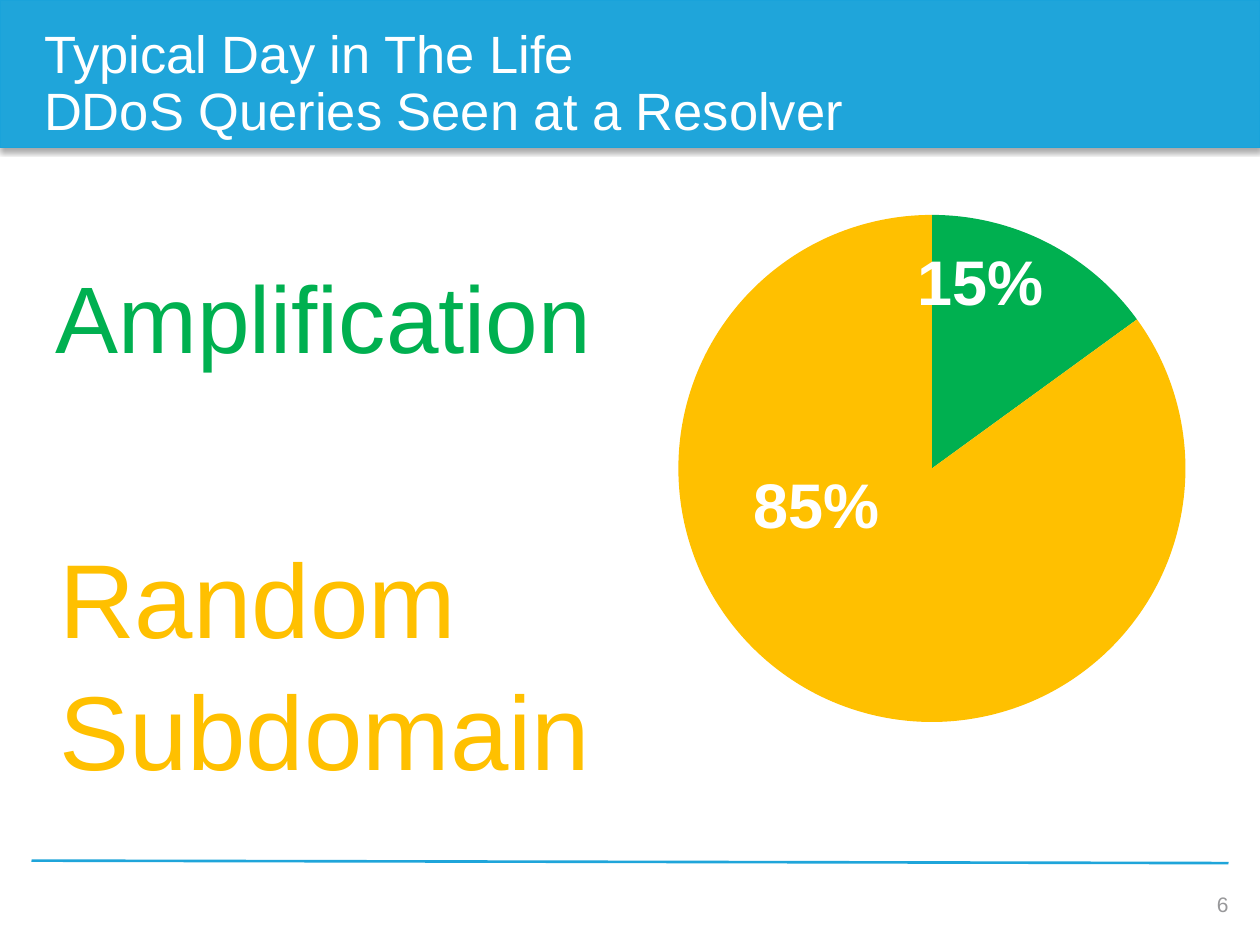
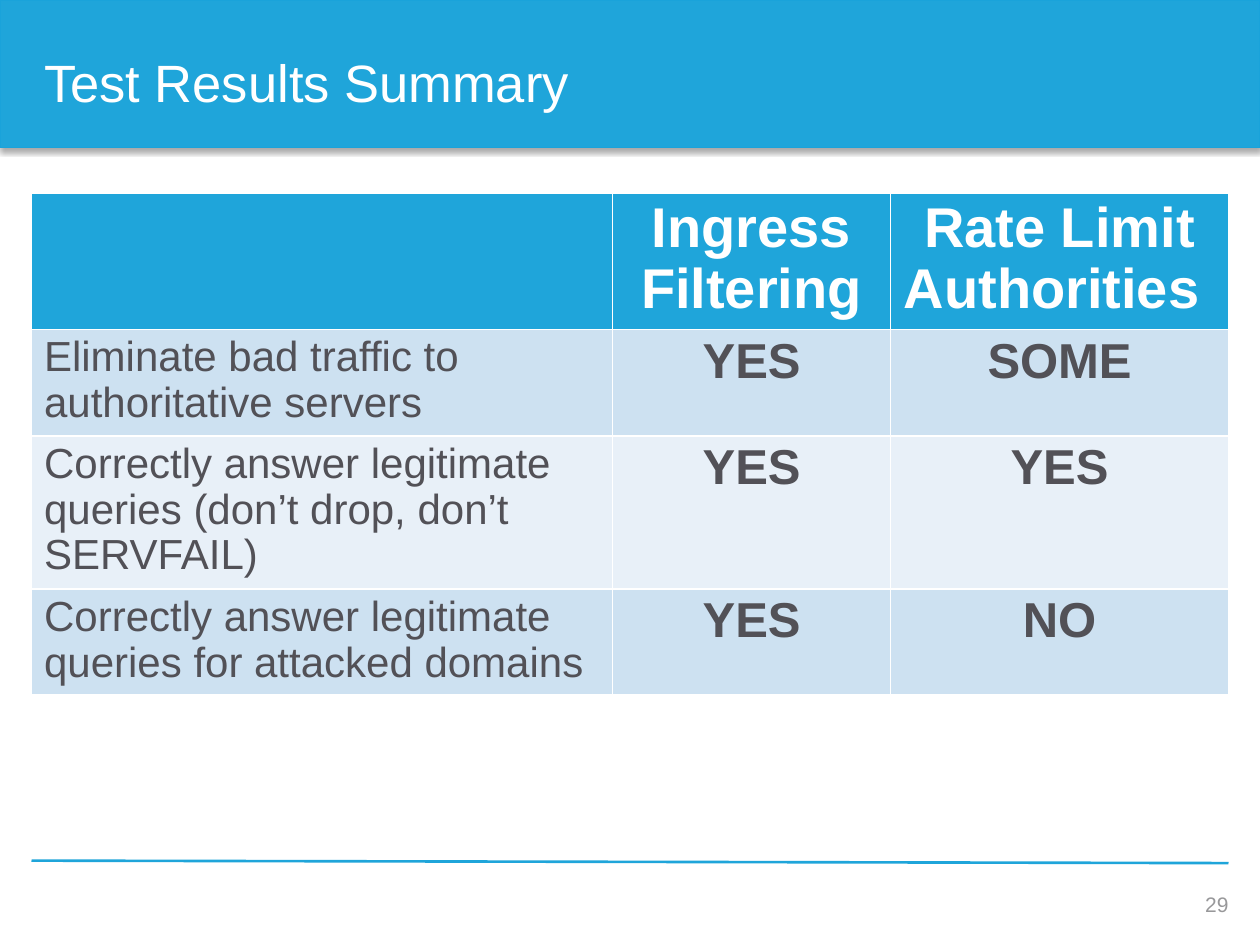
from lxml import etree
from pptx import Presentation
from pptx.chart.data import CategoryChartData
from pptx.dml.color import RGBColor
from pptx.enum import chart as charts, shapes, text
from pptx.oxml import parse_xml
from pptx.oxml.ns import nsdecls, qn
from pptx.util import Pt

FONT = "Arial"
COLORS = {
    "blue": "1FA5DA", "band_edge": "1AA3DA", "white": "FFFFFF",
    "body": "525157", "number": "98989A", "green": "00B050",
    "amber": "FFC000", "row_dark": "CDE1F1", "row_light": "E8F0F8",
}
LEFT, RIGHT = 18, 702
BAND_SHADOW = (
    f'<a:effectLst {nsdecls("a")}><a:outerShdw blurRad="40000" dist="23000" '
    'dir="5400000" rotWithShape="0"><a:srgbClr val="000000">'
    '<a:alpha val="35000"/></a:srgbClr></a:outerShdw></a:effectLst>'
)


def color(name):
    return RGBColor.from_string(COLORS[name])


def points(*lengths):
    return [Pt(length) for length in lengths]


def style_font(font, size, name, bold=False):
    font.name = FONT
    font.size = Pt(size)
    font.bold = bold
    font.color.rgb = color(name)


def style_text(frame, size, name, bold=False, align=text.PP_ALIGN.LEFT, spacing=1.0):
    for para in frame.paragraphs:
        para.alignment = align
        para.line_spacing = spacing
        for span in para.runs:
            style_font(span.font, size, name, bold)


def set_margins(frame, left=0, top=0, right=0, bottom=0):
    frame.margin_left, frame.margin_top, frame.margin_right, frame.margin_bottom = points(
        left, top, right, bottom)


# Shared slide frame: band, footer rule, number, title
def add_band(page):
    band = page.shapes.add_shape(shapes.MSO_SHAPE.RECTANGLE, *points(0, 0, 720, 84.24))
    band.fill.solid()
    band.fill.fore_color.rgb = color("blue")
    band.line.color.rgb = color("band_edge")
    band.line.width = Pt(0.75)
    band.element.spPr.append(parse_xml(BAND_SHADOW))


def add_footer(page, number):
    rule = page.shapes.add_connector(
        shapes.MSO_CONNECTOR.STRAIGHT, *points(LEFT, 491.8, RIGHT, 493.2))
    rule.line.color.rgb = color("blue")
    rule.line.width = Pt(1.5)
    etree.SubElement(rule.element.spPr, qn("a:effectLst"))

    box = page.shapes.add_textbox(*points(534.2, 493.2, 167.8, 28.8))
    frame = box.text_frame
    frame.word_wrap = True
    frame.vertical_anchor = text.MSO_ANCHOR.MIDDLE
    set_margins(frame, top=18)
    frame.text = str(number)
    style_text(frame, 12, "number", align=text.PP_ALIGN.RIGHT)


def set_title(page, title):
    box = page.shapes.title
    box.left, box.top, box.width, box.height = points(LEFT, 18.7, 684.7, 59.8)
    frame = box.text_frame
    frame.text = title
    frame.auto_size = text.MSO_AUTO_SIZE.NONE
    frame.vertical_anchor = text.MSO_ANCHOR.MIDDLE
    style_text(frame, 30, "white", spacing=0.9)
    page.shapes.element.append(box.element)  # in front of the band


def add_page(deck, title, number):
    page = deck.slides.add_slide(deck.slide_layouts[5])
    add_band(page)
    add_footer(page, number)
    set_title(page, title)
    return page


# Content elements
def add_attack_name(page, name, place, size, color_name):
    box = page.shapes.add_textbox(*points(*place))
    frame = box.text_frame
    frame.word_wrap = False
    set_margins(frame)
    frame.text = name
    frame.auto_size = text.MSO_AUTO_SIZE.SHAPE_TO_FIT_TEXT
    style_text(frame, size, color_name, spacing=1.05)


def manual_layout(**values):
    fields = "".join(f'<c:{key} val="{value}"/>' for key, value in values.items())
    return parse_xml(f'<c:layout {nsdecls("c")}><c:manualLayout>{fields}'
                     '</c:manualLayout></c:layout>')


def shift_label(series, index, x, y):
    label = series.points[index].data_label
    style_font(label.font, 36, "white", True)
    label.position = charts.XL_LABEL_POSITION.INSIDE_END
    node = series.data_labels._element.find(qn("c:dLbl"))
    node.find(qn("c:showVal")).set("val", "0")
    node.find(qn("c:showPercent")).set("val", "1")
    old_layout = node.find(qn("c:layout"))
    if old_layout is not None:
        node.remove(old_layout)
    number_format = parse_xml(
        f'<c:numFmt {nsdecls("c")} formatCode="0%" sourceLinked="0"/>')
    node.find(qn("c:idx")).addnext(number_format)
    number_format.addprevious(manual_layout(x=x, y=y))


def add_share_pie(page, place, shares):
    data = CategoryChartData()
    data.categories = [str(index + 1) for index in range(len(shares))]
    data.add_series("Series 1", [value for value, _ in shares])
    chart = page.shapes.add_chart(charts.XL_CHART_TYPE.PIE, *points(*place), data).chart
    chart.has_legend = False
    chart.has_title = False
    style_font(chart.font, 10, "body")

    plot = chart.plots[0]
    plot.vary_by_categories = True
    series = plot.series[0]
    for index, (_, name) in enumerate(shares):
        fill = series.points[index].format.fill
        fill.solid()
        fill.fore_color.rgb = color(name)

    labels = series.data_labels
    labels.show_value = False
    labels.show_percentage = True
    labels.number_format = "0%"
    labels.number_format_is_linked = False
    labels.position = charts.XL_LABEL_POSITION.INSIDE_END
    style_font(labels.font, 36, "white", True)
    shift_label(series, 1, -0.09, -0.24)

    area = chart._chartSpace.chart.plotArea
    for old_layout in area.findall(qn("c:layout")):
        area.remove(old_layout)
    area.insert(0, manual_layout(layoutTarget="inner", xMode="edge", yMode="edge",
                                 x=0.2, y=0.03, w=0.68, h=0.84))


def add_results_table(page, rows, widths, heights):
    table = page.shapes.add_table(
        len(rows), len(widths), *points(LEFT, 110.2, sum(widths), sum(heights))).table
    for column, width in zip(table.columns, widths):
        column.width = Pt(width)
    for row_index, (row, height) in enumerate(zip(rows, heights)):
        table.rows[row_index].height = Pt(height)
        for column_index, content in enumerate(row):
            cell = table.cell(row_index, column_index)
            cell.text = content
            cell.fill.solid()
            if row_index == 0:
                fill, size, name = "blue", 32, "white"
            else:
                fill = "row_dark" if row_index % 2 else "row_light"
                size, name = (28 if column_index else 24), "body"
            cell.fill.fore_color.rgb = color(fill)
            align = text.PP_ALIGN.CENTER if column_index else text.PP_ALIGN.LEFT
            style_text(cell.text_frame, size, name, column_index > 0, align, 0.97)


def main():
    deck = Presentation()
    deck.slide_width, deck.slide_height = points(720, 540)

    # Share of attack queries
    page = add_page(deck, "Typical Day in The Life\vDDoS Queries Seen at a Resolver", 6)
    add_share_pie(page, (302.4, 111.6, 426.2, 347), [(15, "green"), (85, "amber")])
    add_attack_name(page, "Amplification", (31.7, 144.7, 308.9, 65.5), 54, "green")
    add_attack_name(page, "Random\nSubdomain", (33.8, 301, 306.7, 145.4), 60, "amber")

    # Comparison of the two defences
    page = add_page(deck, "Test Results Summary", 29)
    add_results_table(page, [
        ("", "Ingress Filtering", "Rate Limit Authorities "),
        ("Eliminate bad traffic to authoritative servers", "YES", "SOME"),
        ("Correctly answer legitimate queries (don’t drop, don’t SERVFAIL)", "YES", "YES"),
        ("Correctly answer legitimate queries for attacked domains", "YES", "NO"),
    ], widths=(332, 159, 193), heights=(78, 61, 87.5, 60.5))

    deck.save("out.pptx")


if __name__ == "__main__":
    main()
